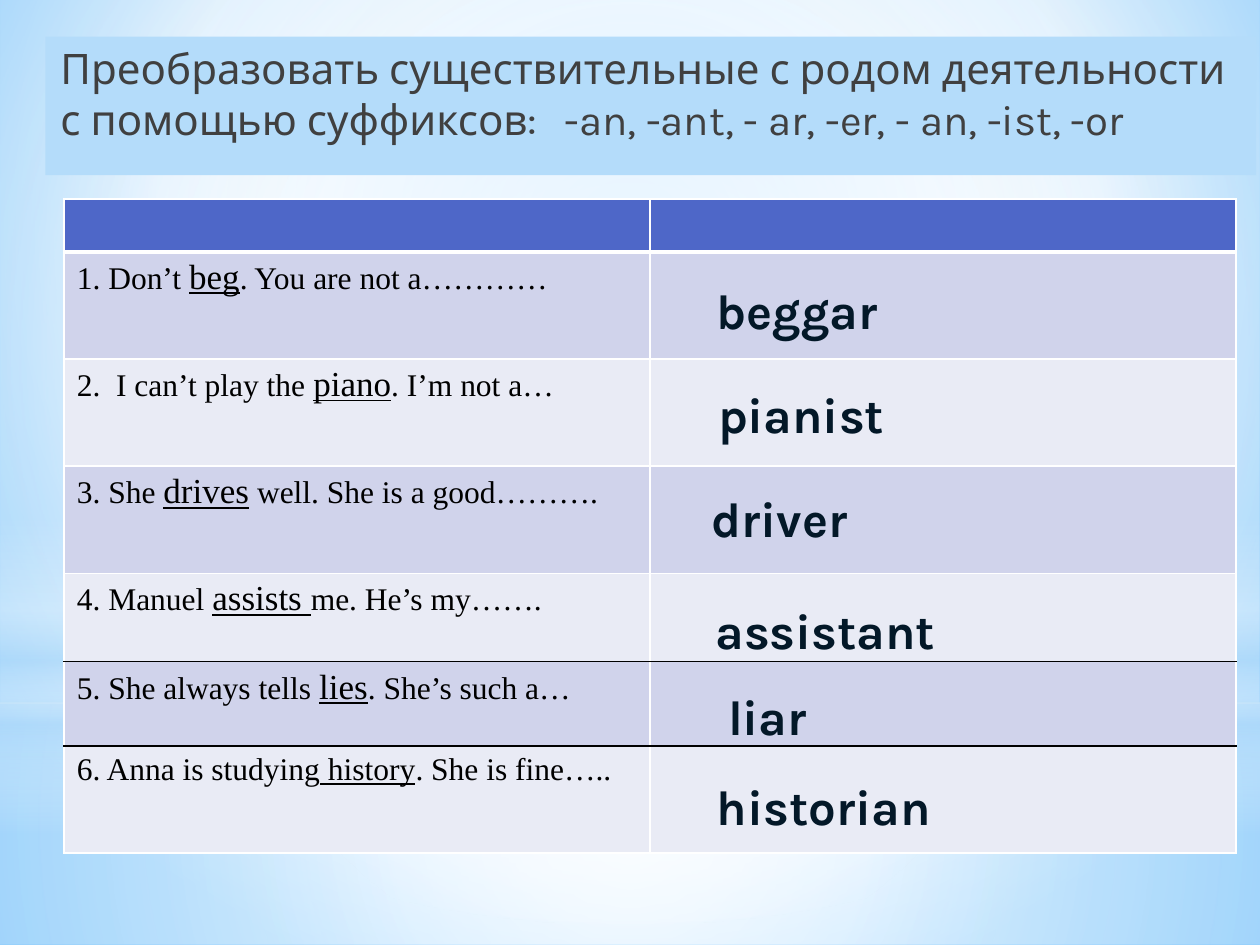
from itertools import product
from lxml.etree import SubElement
from pptx import Presentation
from pptx.dml.color import RGBColor
from pptx.enum.shapes import MSO_SHAPE
from pptx.enum.text import MSO_ANCHOR, PP_ALIGN
from pptx.oxml.ns import qn
from pptx.util import Inches, Pt

THEME = {
    "heading_font": "Karla", "table_font": "Times New Roman",
    "heading_size": 24, "sentence_size": 18, "keyword_size": 20, "answer_size": 28,
    "heading": "404040", "panel": "B4DCFA", "answer": "031828", "ink": "000000",
    "white": "FFFFFF", "header": "4E67C8", "bands": ("D0D3EB", "E9EBF5"),
    "sky": "9ED5FF", "deep_sky": "5BB9FF",
}
WHITE, PANEL = THEME["white"], THEME["panel"]

HEADING = ("Преобразовать существительные с родом деятельности с помощью суффиксов:"
           "\t-an, -ant, - ar, -er, - an, -ist, -or")
SENTENCES = [
    ("1. Don’t ", "beg", ". You are not a…………"),
    ("2.  I can’t play the ", "piano", ". I’m not a…"),
    ("3. She ", "drives", " well. She is a good………."),
    ("4. Manuel ", "assists ", "me. He’s my……."),
    ("5. She always tells ", "lies", ". She’s such a…"),
    ("6. Anna is studying", " history", ". She is fine….."),
]
ANSWERS = [
    ("beggar", 5.59, 2.18, 1.97), ("pianist", 5.6, 3, 1.69),
    ("driver", 5.55, 3.83, 2.05), ("assistant", 5.58, 4.72, 2.36),
    ("liar", 5.68, 5.4, 1.31), ("historian", 5.59, 6.11, 2.55),
]
ROW_HEIGHTS = [0.42, 0.85, 0.85, 0.85, 0.7, 0.67, 0.85]
COLUMN_WIDTH = 4.65
THIN, THICK, DARK = (WHITE, 1), (WHITE, 3), (THEME["ink"], 1)
ROW_EDGES = [THIN, THICK, THIN, THIN, THIN, DARK, DARK, THIN]

CENTRE = (50, 50, 50, 50)
BACKGROUND = [(0, THEME["sky"], 100), (60, WHITE, 100), (100, THEME["deep_sky"], 100)]
GLOWS = [
    (MSO_SHAPE.RECTANGLE, 5.58, 1.92, CENTRE,
     [(0, WHITE, 91), (37, WHITE, 76), (100, PANEL, 79)]),
    (MSO_SHAPE.RECTANGLE, 0, 5.58, CENTRE,
     [(0, WHITE, 89), (48, WHITE, 62), (100, PANEL, 79)]),
    (MSO_SHAPE.RECTANGLE, 4.12, 2.5, None,
     [(0, WHITE, 0), (29, WHITE, 30), (45, PANEL, 40),
      (55, WHITE, 26), (65, PANEL, 60), (100, WHITE, 0)]),
    (MSO_SHAPE.OVAL, 1.75, 5.58, CENTRE, [(0, WHITE, 100), (56, WHITE, 0)]),
]


def add_element(parent, tag, **attributes):
    return SubElement(parent, qn(tag), {key: str(value) for key, value in attributes.items()})


def set_gradient(fill, properties, stops, focus):
    fill.solid()
    solid = properties.find(qn("a:solidFill"))
    gradient = add_element(properties, "a:gradFill", rotWithShape=1)
    properties.replace(solid, gradient)
    stop_list = add_element(gradient, "a:gsLst")
    for position, colour, opacity in stops:
        stop = add_element(stop_list, "a:gs", pos=position * 1000)
        tint = add_element(stop, "a:srgbClr", val=colour)
        if opacity < 100:
            add_element(tint, "a:alpha", val=opacity * 1000)
    if focus:
        circle = add_element(gradient, "a:path", path="circle")
        sides = {side: value * 1000 for side, value in zip("ltrb", focus)}
        add_element(circle, "a:fillToRect", **sides)
    else:
        add_element(gradient, "a:lin", ang=90 * 60000, scaled=0)


def add_span(para, text, size, font, colour, bold=False, underline=False):
    span = para.add_run()
    span.text = text
    span.font.size = Pt(size)
    span.font.name = font
    span.font.bold = bold
    span.font.underline = underline
    span.font.color.rgb = RGBColor.from_string(colour)


def set_borders(cell, left, right, top, bottom):
    properties = cell._tc.get_or_add_tcPr()
    for side, (colour, width) in zip("LRTB", (left, right, top, bottom)):
        line = add_element(properties, f"a:ln{side}", w=Pt(width))
        add_element(add_element(line, "a:solidFill"), "a:srgbClr", val=colour)


def add_background(page):
    fill = page.background.fill
    fill.solid()
    properties = page.element.cSld.find(qn("p:bg")).find(qn("p:bgPr"))
    set_gradient(fill, properties, BACKGROUND, (20, 10, 20, 60))
    for kind, top, height, focus, stops in GLOWS:
        glow = page.shapes.add_shape(kind, 0, Inches(top), Inches(10), Inches(height))
        glow.shadow.inherit = False
        glow.line.fill.background()
        set_gradient(glow.fill, glow.element.spPr, stops, focus)


def add_heading(page):
    box = page.shapes.title
    box.left, box.top, box.width, box.height = map(Inches, (0.36, 0.29, 9.61, 1.1))
    box.fill.solid()
    box.fill.fore_color.rgb = RGBColor.from_string(PANEL)
    box.text_frame.word_wrap = True
    box.text_frame.vertical_anchor = MSO_ANCHOR.TOP
    para = box.text_frame.paragraphs[0]
    para.alignment = PP_ALIGN.LEFT
    para.line_spacing = 1
    para.space_before, para.space_after = Pt(4.8), Pt(3)
    properties = para._p.get_or_add_pPr()
    properties.set("marL", str(Inches(0.02)))
    properties.set("indent", "0")
    add_element(add_element(properties, "a:tabLst"), "a:tab", pos=Inches(4.28), algn="l")
    add_span(para, HEADING, THEME["heading_size"], THEME["heading_font"], THEME["heading"])
    page.shapes._spTree.append(box.element)


def add_exercise(page):
    table = page.shapes.add_table(
        len(ROW_HEIGHTS), 2, Inches(0.51), Inches(1.58),
        Inches(2 * COLUMN_WIDTH), Inches(sum(ROW_HEIGHTS))).table
    table.first_row = table.horz_banding = False
    for column in table.columns:
        column.width = Inches(COLUMN_WIDTH)
    for row, height in zip(table.rows, ROW_HEIGHTS):
        row.height = Inches(height)
    for row, column in product(range(len(ROW_HEIGHTS)), range(2)):
        cell = table.cell(row, column)
        set_borders(cell, THIN, THIN, ROW_EDGES[row], ROW_EDGES[row + 1])
        cell.fill.solid()
        colour = THEME["bands"][(row - 1) % 2] if row else THEME["header"]
        cell.fill.fore_color.rgb = RGBColor.from_string(colour)
    for row, sentence in enumerate(SENTENCES, 1):
        para = table.cell(row, 0).text_frame.paragraphs[0]
        keyword_size = THEME["keyword_size" if row < len(SENTENCES) else "sentence_size"]
        sizes = (THEME["sentence_size"], keyword_size, THEME["sentence_size"])
        for index, (text, size) in enumerate(zip(sentence, sizes)):
            add_span(para, text, size, THEME["table_font"], THEME["ink"], underline=index == 1)


def add_answers(page):
    for word, left, top, width in ANSWERS:
        box = page.shapes.add_textbox(*map(Inches, (left, top, width, 0.57)))
        box.text_frame.word_wrap = True
        add_span(box.text_frame.paragraphs[0], word, THEME["answer_size"],
                 THEME["heading_font"], THEME["answer"], bold=True)


def main():
    deck = Presentation()
    deck.slide_width, deck.slide_height = Inches(10), Inches(7.5)
    page = deck.slides.add_slide(deck.slide_layouts[5])
    add_background(page)
    add_heading(page)
    add_exercise(page)
    add_answers(page)
    deck.save("out.pptx")


if __name__ == "__main__":
    main()
